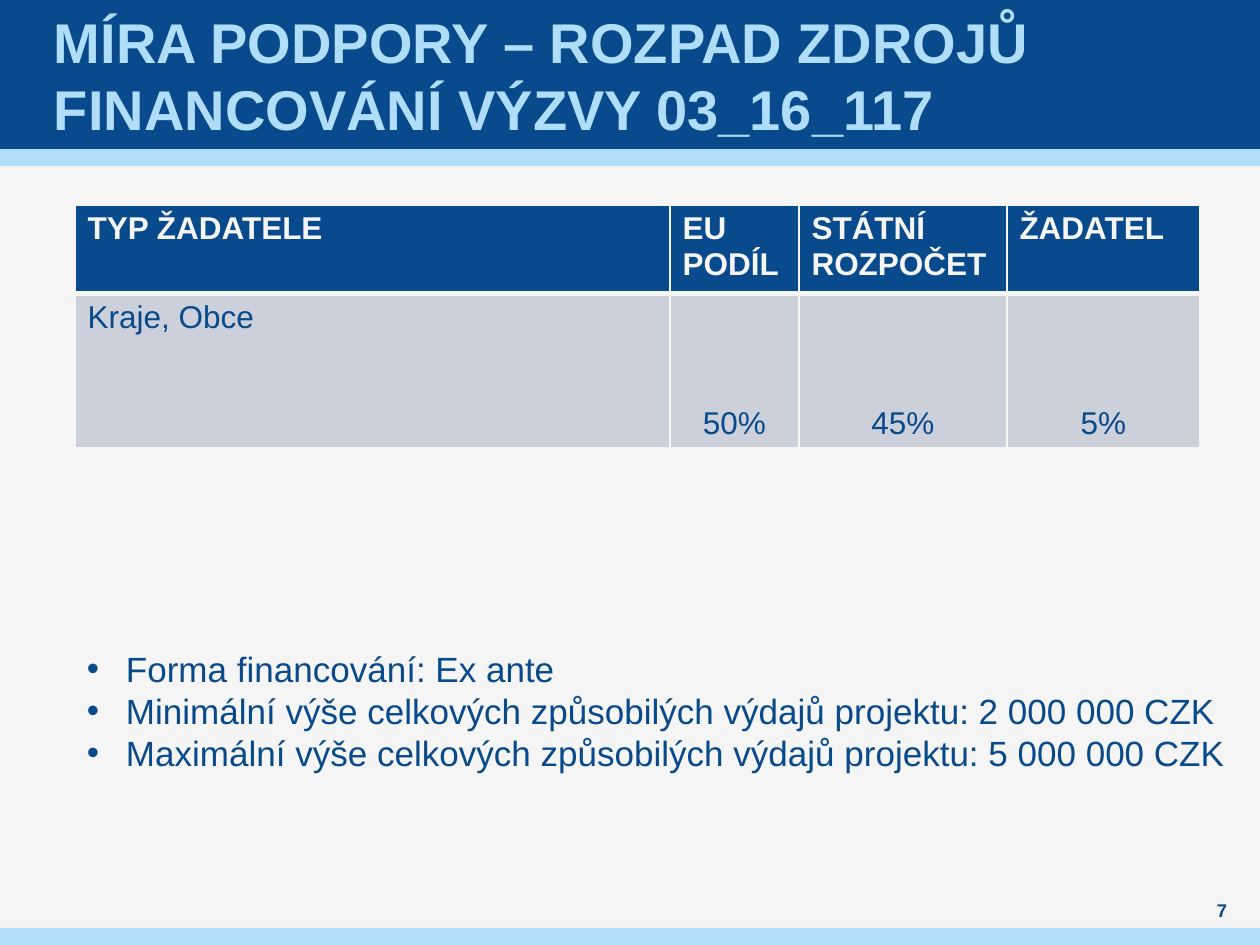
from lxml.etree import SubElement
from pptx import Presentation
from pptx.dml.color import RGBColor
from pptx.enum.shapes import MSO_SHAPE
from pptx.enum.text import MSO_ANCHOR, PP_ALIGN
from pptx.oxml.ns import qn
from pptx.util import Pt

EMU_PER_PX = 914400 / 126
WIDTH, HEIGHT = 1260, 945
NAVY, SKY, PALE, GREY = "084A8B", "AFDDFA", "F5F5F5", "CCD0DA"


def px(length):
    return round(length * EMU_PER_PX)


def color(value):
    return RGBColor.from_string(value)


def paint(fill, value):
    fill.solid()
    fill.fore_color.rgb = color(value)


def format_text(text_frame, size, value, bold=False, align=PP_ALIGN.LEFT):
    for paragraph in text_frame.paragraphs:
        paragraph.alignment = align
        for run in paragraph.runs:
            run.font.name = "Arial"
            run.font.size = Pt(size)
            run.font.bold = bold
            run.font.color.rgb = color(value)


def add_band(slide, top, height, value):
    band = slide.shapes.add_shape(MSO_SHAPE.RECTANGLE, 0, px(top), px(WIDTH), px(height))
    band.shadow.inherit = False
    paint(band.fill, value)
    band.line.fill.background()


def add_text(slide, box, text, anchor, margins):
    shape = slide.shapes.add_textbox(*map(px, box))
    text_frame = shape.text_frame
    text_frame.word_wrap = True
    text_frame.vertical_anchor = anchor
    text_frame.margin_left = text_frame.margin_right = px(margins[0])
    text_frame.margin_top = text_frame.margin_bottom = px(margins[1])
    text_frame.text = text
    return text_frame


def add_header(slide, height):
    add_band(slide, height, 17, SKY)
    add_band(slide, 0, height, NAVY)
    title = add_text(slide, (49, 0, 1160, height),
                     "MÍRA PODPORY – ROZPAD ZDROJŮ FINANCOVÁNÍ VÝZVY 03_16_117",
                     MSO_ANCHOR.MIDDLE, (5, 0))
    format_text(title, 32, SKY, bold=True)


def set_borders(cell, widths):
    properties = cell._tc.get_or_add_tcPr()
    for position, (side, width) in enumerate(widths.items()):
        line = properties.makeelement(qn(f"a:ln{side}"), {"w": str(Pt(width))})
        fill = SubElement(line, qn("a:solidFill"))
        SubElement(fill, qn("a:srgbClr"), val=PALE)
        properties.insert(position, line)


def add_support_table(slide, left, top):
    rows = [("TYP ŽADATELE", "EU PODÍL", "STÁTNÍ ROZPOČET", "ŽADATEL"),
            ("Kraje, Obce", "50%", "45%", "5%")]
    widths, heights = (595, 129, 208, 193), (82, 154)
    table = slide.shapes.add_table(len(rows), len(widths), px(left), px(top),
                                   px(sum(widths)), px(sum(heights))).table
    for column, width in zip(table.columns, widths):
        column.width = px(width)
    for row_index, (texts, height) in enumerate(zip(rows, heights)):
        table.rows[row_index].height = px(height)
        is_header = row_index == 0
        for column_index, text in enumerate(texts):
            cell = table.cell(row_index, column_index)
            cell.text_frame.text = text
            is_share = not is_header and column_index > 0
            cell.vertical_anchor = MSO_ANCHOR.BOTTOM if is_share else MSO_ANCHOR.TOP
            format_text(cell.text_frame, 18, PALE if is_header else NAVY, is_header,
                        PP_ALIGN.CENTER if is_share else PP_ALIGN.LEFT)
            paint(cell.fill, NAVY if is_header else GREY)
            set_borders(cell, {"L": 1, "R": 1, "T": 1 if is_header else 3,
                               "B": 3 if is_header else 1})


def add_conditions(slide, box):
    conditions = ["Forma financování: Ex ante",
                  "Minimální výše celkových způsobilých výdajů projektu: 2 000 000 CZK",
                  "Maximální výše celkových způsobilých výdajů projektu: 5 000 000 CZK"]
    text_frame = add_text(slide, box, "\n".join(conditions), MSO_ANCHOR.TOP, (12, 6))
    format_text(text_frame, 20, NAVY)
    for paragraph in text_frame.paragraphs:
        properties = paragraph._p.get_or_add_pPr()
        properties.set("marL", str(px(39)))
        properties.set("indent", str(px(-39)))
        SubElement(properties, qn("a:buFont"), typeface="Arial")
        SubElement(properties, qn("a:buChar"), char="•")


def add_footer(slide, height):
    add_band(slide, HEIGHT - height, height, SKY)
    number = add_text(slide, (1190, 898, 64, 25), "7", MSO_ANCHOR.MIDDLE, (0, 0))
    format_text(number, 10.5, NAVY, True, PP_ALIGN.CENTER)


def main():
    presentation = Presentation()
    presentation.slide_width, presentation.slide_height = px(WIDTH), px(HEIGHT)
    slide = presentation.slides.add_slide(presentation.slide_layouts[6])
    paint(slide.background.fill, PALE)
    add_header(slide, 149)
    add_support_table(slide, 75, 205)
    add_conditions(slide, (75, 641, 1173, 183))
    add_footer(slide, 17)
    presentation.save("out.pptx")


if __name__ == "__main__":
    main()
